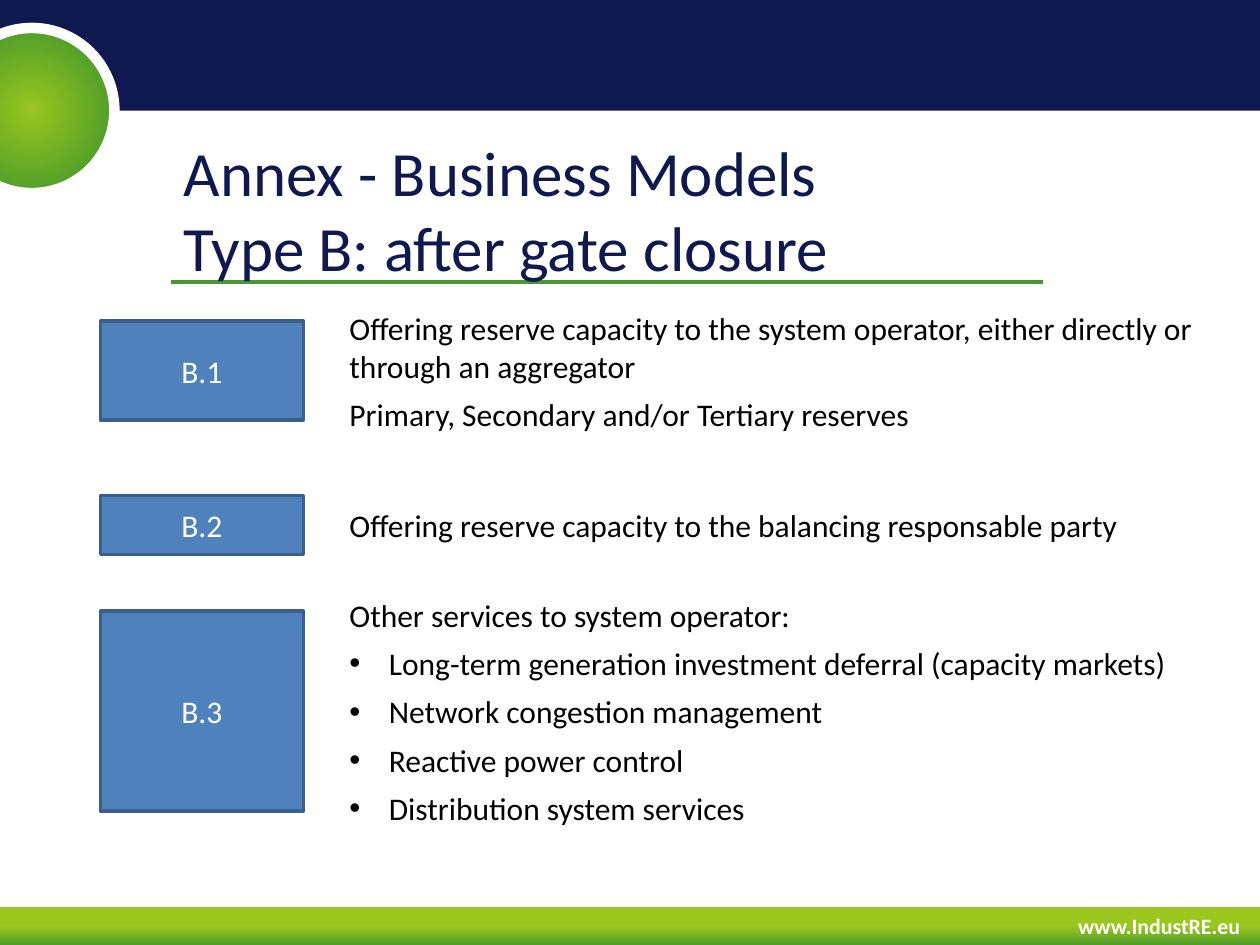
from lxml import etree
from pptx import Presentation
from pptx.dml.color import RGBColor
from pptx.enum import shapes as sh, text as tx
from pptx.oxml.ns import qn
from pptx.util import Pt

FONT = "Calibri"
HEX = {"navy": "0F1950", "lime": "9AC61E", "leaf": "4F9E2A", "rule": "4A9731",
       "blue": "4F81BD", "edge": "3A5F8C", "white": "FFFFFF", "black": "000000"}
WIDE, HIGH = 720, 540
GAP = 6      # space between paragraphs
DENT = 22.5  # bullet indent

# Label, label top, label height, text height, lines (bulleted or not)
ROWS = [
    ("B.1", 183.6, 56.4, 78.5, [
        ("Offering reserve capacity to the system operator, "
         "either directly or through an aggregator", False),
        ("Primary, Secondary and/or Tertiary reserves", False)]),
    ("B.2", 283, 34, 29, [
        ("Offering reserve capacity to the balancing responsable party", False)]),
    ("B.3", 349.2, 114.4, 140.4, [
        ("Other services to system operator:", False),
        ("Long-term generation investment deferral (capacity markets)", True),
        ("Network congestion management", True),
        ("Reactive power control", True),
        ("Distribution system services", True)]),
]


def tint(name):
    return RGBColor.from_string(HEX[name])


def pts(box):
    return [Pt(v) for v in box]


def style(para, size, color, bold=False, align=tx.PP_ALIGN.LEFT):
    para.alignment = align
    for run in para.runs:
        font = run.font
        font.name, font.size, font.bold = FONT, Pt(size), bold
        font.color.rgb = tint(color)


def block(slide, kind, box, fill=None, line=None, width=0):
    shape = slide.shapes.add_shape(kind, *pts(box))
    shape.shadow.inherit = False
    if fill:
        shape.fill.solid()
        shape.fill.fore_color.rgb = tint(fill)
    if line:
        shape.line.color.rgb = tint(line)
        shape.line.width = Pt(width)
    else:
        shape.line.fill.background()
    return shape


def label(slide, box):
    frame = slide.shapes.add_textbox(*pts(box)).text_frame
    frame.word_wrap = True
    frame.vertical_anchor = tx.MSO_ANCHOR.MIDDLE
    return frame


def blend(shape, start, end):
    """Fill a shape from lime to leaf, running downwards."""
    shape.fill.gradient()
    shape.fill.gradient_angle = 270
    for stop, name, pos in zip(shape.fill.gradient_stops,
                               ("lime", "leaf"), (start, end)):
        stop.color.rgb = tint(name)
        stop.position = pos


def radial(shape):
    """Turn a linear gradient into one that spreads from the centre."""
    grad = shape._element.spPr.find(qn("a:gradFill"))
    grad.remove(grad.find(qn("a:lin")))
    ring = etree.SubElement(grad, qn("a:path"), path="circle")
    etree.SubElement(ring, qn("a:fillToRect"),
                     dict.fromkeys("ltrb", "50000"))


def header(slide, box):
    x, y, w, h = box
    block(slide, sh.MSO_SHAPE.RECTANGLE, box, "navy")
    size = 94.4
    disc = block(slide, sh.MSO_SHAPE.OVAL, (x - 29, y + h - size / 2, size, size),
                 line="white", width=6)
    blend(disc, 0, 0.72)
    radial(disc)


def footer(slide, box):
    x, y, w, h = box
    blend(block(slide, sh.MSO_SHAPE.RECTANGLE, box), 0.5, 1)
    frame = label(slide, (x + 581, y, 162.8, h))
    frame.text = "www.IndustRE.eu"
    style(frame.paragraphs[0], 12.5, "white", True, tx.PP_ALIGN.CENTER)


def title(slide, box):
    x, y, w, h = box
    # Rule below the title
    rule = slide.shapes.add_connector(sh.MSO_CONNECTOR.STRAIGHT,
                                      *pts((x, y + h, x + w, y + h)))
    rule.line.color.rgb = tint("rule")
    rule.line.width = Pt(2)
    etree.SubElement(rule._element.spPr, qn("a:effectLst"))
    # Two lines in one paragraph
    frame = label(slide, (x, y, w, 42.5))
    para = frame.paragraphs[0]
    para.text = "Annex - Business Models\vType B: after gate closure"
    style(para, 36, "navy")


def bullet(para):
    props = para._p.get_or_add_pPr()
    props.set("marL", str(Pt(DENT)))
    props.set("indent", str(-Pt(DENT)))
    etree.SubElement(props, qn("a:buFont"), typeface="Arial")
    etree.SubElement(props, qn("a:buChar"), char="•")


def row(slide, box, name, tall, lines):
    x, y, w, h = box
    # Name on the left
    tag = block(slide, sh.MSO_SHAPE.RECTANGLE, (x, y, 116, h), "blue", "edge", 2)
    tag.text_frame.text = name
    tag.text_frame.vertical_anchor = tx.MSO_ANCHOR.MIDDLE
    style(tag.text_frame.paragraphs[0], 18, "white", align=tx.PP_ALIGN.CENTER)
    # Description centred on the name
    left = 135.2
    frame = label(slide, (x + left, y + (h - tall) / 2, w - left, tall))
    frame.auto_size = tx.MSO_AUTO_SIZE.SHAPE_TO_FIT_TEXT
    for i, (line, dot) in enumerate(lines):
        para = frame.add_paragraph() if i else frame.paragraphs[0]
        para.text = line
        if i:
            para.space_before = Pt(GAP)
        if dot:
            bullet(para)
        style(para, 18, "black")


def main():
    deck = Presentation()
    deck.slide_width, deck.slide_height = Pt(WIDE), Pt(HIGH)
    slide = deck.slides.add_slide(deck.slide_layouts[6])
    footer(slide, (0, HIGH - 21.6, WIDE, 21.6))
    header(slide, (0, 0, WIDE, 63.2))
    title(slide, (98, 98, 498, 63.3))
    for name, top, high, tall, lines in ROWS:
        row(slide, (57.4, top, 633, high), name, tall, lines)
    deck.save("out.pptx")


if __name__ == "__main__":
    main()
